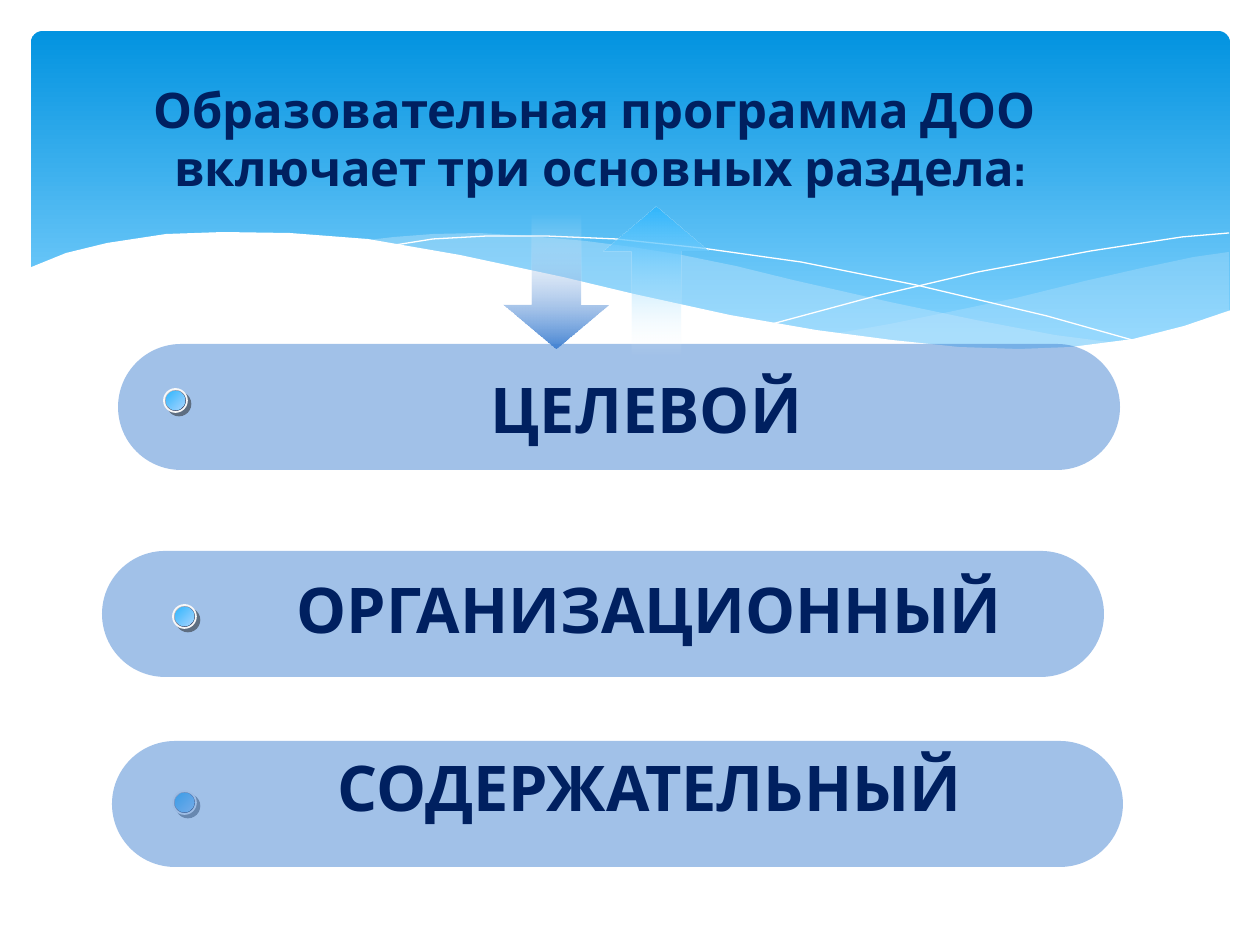
import pptx
import pptx.util
import pptx.dml.color
import pptx.enum.shapes
import pptx.enum.text
import pptx.oxml.ns
import lxml.etree

RGB = pptx.dml.color.RGBColor
SHAPE = pptx.enum.shapes.MSO_SHAPE
ALIGN = pptx.enum.text.PP_ALIGN
ANCHOR = pptx.enum.text.MSO_ANCHOR
FIT = pptx.enum.text.MSO_AUTO_SIZE
qn = pptx.oxml.ns.qn

PX = 914400 / 126

NAVY = RGB(0x00, 0x20, 0x60)
WHITE = RGB(0xFF, 0xFF, 0xFF)
BLUE = RGB(0x45, 0x84, 0xD3)
SKY = RGB(0x31, 0xB6, 0xFD)
PALE_SKY = RGB(0xA7, 0xD4, 0xFE)
BANNER_TOP = RGB(0x02, 0x93, 0xE0)
BANNER_BOTTOM = RGB(0x83, 0xD3, 0xFE)
MIST = RGB(0xC6, 0xE7, 0xFC)
RIM_LIGHT = RGB(0xDD, 0xDD, 0xE1)
RIM_DARK = RGB(0x22, 0x38, 0x64)
RIM_LINE = RGB(0xF8, 0xF8, 0xF8)
SHADOW = "1C1C1C"

TITLE = "Образовательная программа ДОО \vвключает три основных раздела:"
TITLE_BOX = (108, 59, 984, 158)
BANNER_BOX = (31, 31, 1199, 340)

SECTIONS = [
    {"name": "ЦЕЛЕВОЙ", "pill": (118, 344, 1002, 126),
     "label": (207, 373, 879, 82), "bullet": (164, 389)},
    {"name": "ОРГАНИЗАЦИОННЫЙ", "pill": (102, 551, 1002, 126),
     "label": (217, 573, 864, 82), "bullet": (173, 605)},
    {"name": "СОДЕРЖАТЕЛЬНЫЙ", "pill": (112, 741, 1011, 126),
     "label": (228, 751, 843, 82), "bullet": (173, 791)},
]

DOWN_ARROW = {"box": (488, 229, 135, 105), "turn": 90, "color": BLUE}
UP_ARROW = {"box": (581, 229, 149, 105), "turn": 270, "color": SKY}

RIGHT_MIST = [
    (1229, 252), (1194, 257), (1142, 268), (1085, 281), (1016, 298), (949, 312),
    (890, 324), (833, 334), (888, 341), (938, 346), (984, 349), (1026, 350),
    (1064, 349), (1110, 344), (1150, 337), (1187, 327), (1213, 318), (1229, 311)]
MIDDLE_MIST = [
    (1125, 344), (1055, 335), (976, 320), (890, 302), (793, 280), (736, 266),
    (682, 255), (632, 247), (586, 241), (529, 236), (479, 233), (433, 234),
    (394, 237), (360, 241), (431, 251), (509, 266), (566, 280), (668, 302),
    (757, 322), (838, 335), (910, 344), (973, 349), (1031, 350), (1080, 349)]
FALLING_LINE = [
    (389, 246), (433, 239), (487, 236), (546, 236), (616, 239), (701, 248),
    (801, 262), (916, 285), (1047, 316), (1143, 343)]
RISING_LINE = [
    (772, 324), (876, 296), (978, 272), (1091, 251), (1182, 237), (1229, 233)]
WHITE_WAVE = [
    (1231, 310), (1184, 326), (1133, 339), (1071, 347), (1019, 349), (959, 347),
    (892, 340), (816, 330), (730, 315), (634, 294), (563, 277), (460, 255),
    (368, 239), (290, 233), (223, 232), (166, 234), (107, 243), (66, 253),
    (29, 268), (29, 415), (1231, 415)]


def emu(box):
    return [round(length * PX) for length in box]


def set_alpha(shape, percent):
    color = next(shape._element.spPr.iter(qn("a:srgbClr")))
    lxml.etree.SubElement(color, qn("a:alpha"), val=str(percent * 1000))


def paint_solid(shape, color, alpha=100):
    shape.shadow.inherit = False
    shape.fill.solid()
    shape.fill.fore_color.rgb = color
    shape.line.fill.background()
    if alpha < 100:
        set_alpha(shape, alpha)


def paint_gradient(shape, colors, angle, end=1):
    shape.shadow.inherit = False
    shape.fill.gradient()
    shape.fill.gradient_angle = angle
    for stop, color, position in zip(shape.fill.gradient_stops, colors, (0, end)):
        stop.color.rgb = color
        stop.position = position
    shape.line.fill.background()


def add_shape(kind, box):
    return slide.shapes.add_shape(kind, *emu(box))


def add_curve(points, closed):
    builder = slide.shapes.build_freeform(*points[0], scale=PX)
    builder.add_line_segments(points[1:], close=closed)
    return builder.convert_to_shape()


def add_arrow(arrow):
    shape = add_shape(SHAPE.RIGHT_ARROW, arrow["box"])
    shape.adjustments[0], shape.adjustments[1] = 0.465, 0.421
    shape.rotation = arrow["turn"]
    paint_gradient(shape, (WHITE, arrow["color"]), 0)
    set_alpha(shape, 0)


def add_bullet(left, top):
    rim = add_shape(SHAPE.OVAL, (left, top, 23, 23))
    paint_gradient(rim, (RIM_LIGHT, RIM_DARK), 315)
    rim.line.color.rgb = RIM_LINE
    rim.line.width = pptx.util.Pt(1)
    effects = rim._element.spPr.find(qn("a:effectLst"))
    shadow = lxml.etree.SubElement(
        effects, qn("a:outerShdw"), blurRad="0", dist=str(pptx.util.Pt(2.8)),
        dir="2700000", algn="ctr", rotWithShape="0")
    shade = lxml.etree.SubElement(shadow, qn("a:srgbClr"), val=SHADOW)
    lxml.etree.SubElement(shade, qn("a:alpha"), val="50000")
    core = add_shape(SHAPE.OVAL, (left + 2, top + 2, 19, 19))
    paint_gradient(core, (SKY, PALE_SKY), 315)


def write(frame, text, size, spacing):
    frame.text = text
    frame.word_wrap = True
    paragraph = frame.paragraphs[0]
    paragraph.alignment = ALIGN.CENTER
    paragraph.line_spacing = spacing
    for run in paragraph.runs:
        values = {"name": "Cabin", "size": pptx.util.Pt(size), "bold": True}
        for key, value in values.items():
            setattr(run.font, key, value)
        run.font.color.rgb = NAVY


deck = pptx.Presentation()
deck.slide_width, deck.slide_height = emu((1260, 945))
slide = deck.slides.add_slide(deck.slide_layouts[5])

banner = add_shape(SHAPE.ROUNDED_RECTANGLE, BANNER_BOX)
banner.adjustments[0] = 0.034
paint_gradient(banner, (BANNER_TOP, BANNER_BOTTOM), 270, 0.9)
for mist, alpha in ((RIGHT_MIST, 29), (MIDDLE_MIST, 40)):
    paint_solid(add_curve(mist, True), MIST, alpha)
for points in (FALLING_LINE, RISING_LINE):
    curve = add_curve(points, False)
    curve.shadow.inherit = False
    curve.fill.background()
    curve.line.color.rgb = WHITE
    curve.line.width = pptx.util.Pt(0)
paint_solid(add_curve(WHITE_WAVE, True), WHITE)

title = slide.shapes.title
slide.shapes._spTree.append(title._element)
title.left, title.top, title.width, title.height = emu(TITLE_BOX)
write(title.text_frame, TITLE, 28, 1)
title.text_frame.vertical_anchor = ANCHOR.MIDDLE

add_arrow(DOWN_ARROW)
add_bullet(*SECTIONS[-1]["bullet"])
for section in SECTIONS:
    pill = add_shape(SHAPE.ROUNDED_RECTANGLE, section["pill"])
    pill.adjustments[0] = 0.5
    paint_solid(pill, BLUE, 50)
    label = slide.shapes.add_textbox(*emu(section["label"])).text_frame
    write(label, section["name"], 36, 0.9)
    label.auto_size = FIT.SHAPE_TO_FIT_TEXT
add_arrow(UP_ARROW)
for section in SECTIONS[:-1]:
    add_bullet(*section["bullet"])

deck.save("out.pptx")
